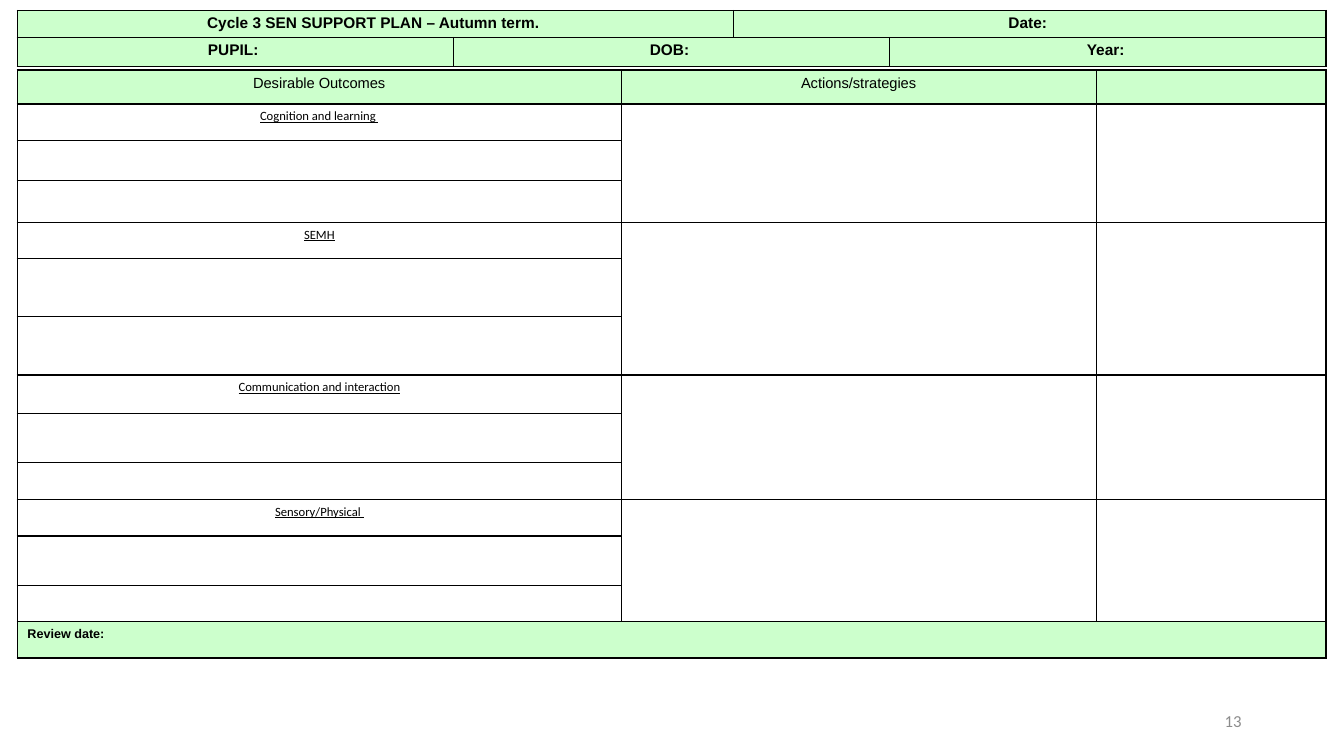
from dataclasses import dataclass

from lxml import etree
from pptx import Presentation
from pptx import util as u
from pptx.dml.color import RGBColor
from pptx.enum import text
from pptx.oxml.ns import qn
from pptx.slide import Slide
from pptx.table import Table, _Cell


@dataclass(frozen=True)
class Theme:
    green: str = "CCFFCC"
    white: str = "FFFFFF"
    ink: str = "000000"
    grey: str = "8C8C8C"
    border: float = 1
    heading_size: float = 11
    column_size: float = 10.5
    body_size: float = 9
    number_size: float = 12
    heading_font: str = "Arial"
    body_font: str = "Calibri"


@dataclass(frozen=True)
class TextStyle:
    size: float
    font: str
    color: str = "000000"
    bold: bool = False
    underline: bool = False
    align: text.PP_ALIGN = text.PP_ALIGN.CENTER


@dataclass(frozen=True)
class Entry:
    row: int
    column: int
    wording: str
    style: TextStyle
    row_span: int = 1
    column_span: int = 1


@dataclass(frozen=True)
class Area:
    title: str
    heights: tuple[float, float, float]


THEME = Theme()
HEADING = TextStyle(THEME.heading_size, THEME.heading_font, bold=True)
COLUMN = TextStyle(THEME.column_size, THEME.heading_font)
AREA = TextStyle(THEME.body_size, THEME.body_font, underline=True)
REVIEW = TextStyle(THEME.body_size, THEME.heading_font, bold=True,
                   align=text.PP_ALIGN.LEFT)
NUMBER = TextStyle(THEME.number_size, THEME.body_font, THEME.grey,
                   align=text.PP_ALIGN.RIGHT)

TABLE_LEFT = 12.4
HEADER_TOP, PLAN_TOP = 7.5, 50
HEADER_COLUMNS = (311.6, 200.2, 111.4, 311.6)
HEADER_ROWS = (19.3, 21)
PLAN_COLUMNS = (431.4, 339.2, 164.2)
COLUMN_ROW, REVIEW_ROW = 24.3, 26

AREAS = (
    Area("Cognition and learning ", (26, 28.4, 30)),
    Area("SEMH", (26.2, 41.5, 41.5)),
    Area("Communication and interaction", (27.6, 35.2, 26.2)),
    Area("Sensory/Physical ", (26, 35.2, 26)),
)

HEADER_ENTRIES = (
    Entry(0, 0, "Cycle 3 SEN SUPPORT PLAN – Autumn term. ", HEADING, column_span=2),
    Entry(0, 2, "Date: ", HEADING, column_span=2),
    Entry(1, 0, "PUPIL: ", HEADING),
    Entry(1, 1, "DOB: ", HEADING, column_span=2),
    Entry(1, 3, "Year: ", HEADING),
)


def style_text(frame: text.MSO_ANCHOR, wording: str, style: TextStyle) -> None:
    frame.text = wording
    paragraph = frame.paragraphs[0]
    paragraph.alignment = style.align
    for run in paragraph.runs:
        run.font.size = u.Pt(style.size)
        run.font.name = style.font
        run.font.bold = style.bold
        run.font.underline = style.underline
        run.font.color.rgb = RGBColor.from_string(style.color)


def format_cell(cell: _Cell, fill: str, margin: float) -> None:
    cell.margin_top = cell.margin_bottom = u.Pt(margin)
    properties = cell._tc.get_or_add_tcPr()
    for side in ("lnL", "lnR", "lnT", "lnB"):
        line = etree.SubElement(properties, qn(f"a:{side}"),
                                w=str(u.Pt(THEME.border)))
        solid = etree.SubElement(line, qn("a:solidFill"))
        etree.SubElement(solid, qn("a:srgbClr"), val=THEME.ink)
    cell.fill.solid()
    cell.fill.fore_color.rgb = RGBColor.from_string(fill)
    etree.SubElement(cell.text_frame.paragraphs[0]._p, qn("a:endParaRPr"),
                     sz=str(int(THEME.body_size * 100)))


def add_grid(slide: Slide, top: float, widths: tuple[float, ...],
             heights: tuple[float, ...], entries: tuple[Entry, ...],
             green_rows: set[int], margin: float) -> Table:
    table = slide.shapes.add_table(
        len(heights), len(widths), u.Pt(TABLE_LEFT), u.Pt(top),
        u.Pt(sum(widths)), u.Pt(sum(heights))).table
    table.first_row = table.horz_banding = False
    for column, width in zip(table.columns, widths):
        column.width = u.Pt(width)
    for index, (row, height) in enumerate(zip(table.rows, heights)):
        row.height = u.Pt(height)
        fill = THEME.green if index in green_rows else THEME.white
        for cell in row.cells:
            format_cell(cell, fill, margin)
    for entry in entries:
        cell = table.cell(entry.row, entry.column)
        if entry.row_span * entry.column_span > 1:
            cell.merge(table.cell(entry.row + entry.row_span - 1,
                                  entry.column + entry.column_span - 1))
        if entry.wording:
            style_text(cell.text_frame, entry.wording, entry.style)
    return table


def plan_entries() -> tuple[Entry, ...]:
    entries = [Entry(0, 0, "Desirable Outcomes", COLUMN),
               Entry(0, 1, "Actions/strategies", COLUMN)]
    for index, area in enumerate(AREAS):
        row = 1 + 3 * index
        entries.append(Entry(row, 0, area.title, AREA))
        entries += [Entry(row, column, "", AREA, row_span=3) for column in (1, 2)]
    entries.append(Entry(1 + 3 * len(AREAS), 0, "Review date:", REVIEW,
                         column_span=3))
    return tuple(entries)


def add_page_number(slide: Slide, number: str) -> None:
    shape = slide.shapes.add_textbox(u.Pt(678), u.Pt(500.4), u.Pt(216), u.Pt(28.8))
    frame = shape.text_frame
    frame.word_wrap = True
    frame.vertical_anchor = text.MSO_ANCHOR.MIDDLE
    style_text(frame, number, NUMBER)


def main() -> None:
    presentation = Presentation()
    presentation.slide_width, presentation.slide_height = u.Pt(960), u.Pt(540)
    slide = presentation.slides.add_slide(presentation.slide_layouts[6])
    area_rows = tuple(height for area in AREAS for height in area.heights)
    plan_rows = (COLUMN_ROW, *area_rows, REVIEW_ROW)
    add_page_number(slide, "13")
    add_grid(slide, HEADER_TOP, HEADER_COLUMNS, HEADER_ROWS, HEADER_ENTRIES,
             {0, 1}, 3)
    add_grid(slide, PLAN_TOP, PLAN_COLUMNS, plan_rows, plan_entries(),
             {0, len(plan_rows) - 1}, 3.6)
    presentation.save("out.pptx")


if __name__ == "__main__":
    main()
